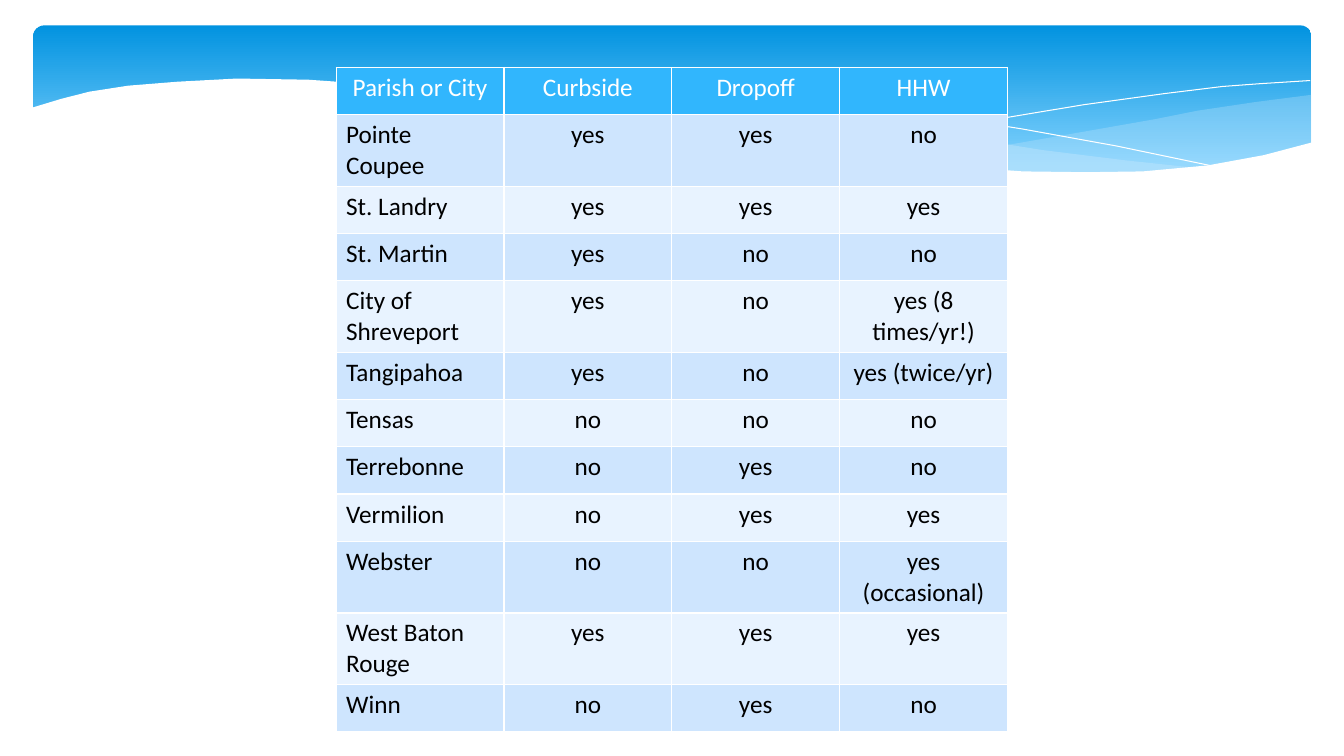
from lxml import etree
from pptx import Presentation
from pptx.dml.color import RGBColor
from pptx.enum.shapes import MSO_SHAPE
from pptx.enum.text import PP_ALIGN
from pptx.oxml.ns import qn
from pptx.util import Cm, Pt

ROUNDED = MSO_SHAPE.ROUNDED_RECTANGLE
LEFT, CENTER = PP_ALIGN.LEFT, PP_ALIGN.CENTER
WHITE, BLACK = "FFFFFF", "000000"
HEADER_BLUE, BAND_DARK, BAND_LIGHT = "31B6FD", "CEE5FE", "E8F3FF"
VEIL_BLUE = "C6E7FC"


def color(value):
    return RGBColor.from_string(value)


def add_outline(points, closed):
    start, *others = [(Cm(x), Cm(y)) for x, y in points]
    builder = slide.shapes.build_freeform(*start, scale=1.0)
    builder.add_line_segments(others, close=closed)
    shape = builder.convert_to_shape()
    shape.shadow.inherit = False
    return shape


presentation = Presentation()
presentation.slide_width = Cm(33.87)
presentation.slide_height = Cm(19.05)
slide = presentation.slides.add_slide(presentation.slide_layouts[6])

# Blue banner
banner = slide.shapes.add_shape(ROUNDED, Cm(0.84), Cm(0.64), Cm(32.21), Cm(3.96))
banner.adjustments[0] = 0.07
banner.shadow.inherit = False
banner.line.fill.background()
banner.fill.gradient()
banner.fill.gradient_angle = 270
for stop, (position, stop_color) in zip(
        banner.fill.gradient_stops, [(0, "0293E0"), (0.9, "83D3FE")]):
    stop.position = position
    stop.color.rgb = color(stop_color)

# Wave outlines, in centimetres
right_veil = [
    (33.05, 2.39), (31.65, 2.57), (30.18, 2.79), (29.13, 3.0), (27.25, 3.33),
    (25.53, 3.63), (23.9, 3.86), (22.4, 4.06), (23.88, 4.19), (25.22, 4.29),
    (26.44, 4.37), (27.91, 4.37), (29.24, 4.32), (30.38, 4.19), (31.67, 3.96),
    (33.05, 3.61)]
middle_veil = [
    (30.23, 4.24), (28.35, 4.04), (26.26, 3.78), (23.9, 3.4), (21.31, 2.95),
    (18.8, 2.54), (16.56, 2.26), (14.22, 2.08), (12.24, 2.03), (10.62, 2.08),
    (9.7, 2.18), (12.27, 2.46), (15.21, 2.95), (17.93, 3.43), (20.37, 3.81),
    (22.53, 4.09), (24.46, 4.27), (26.16, 4.37), (27.69, 4.39), (29.03, 4.34)]
falling_line = [
    (10.46, 2.29), (11.35, 2.16), (12.67, 2.08), (14.66, 2.08), (16.56, 2.13),
    (18.85, 2.31), (21.54, 2.62), (23.55, 2.9), (25.76, 3.25), (28.14, 3.68),
    (30.73, 4.22)]
rising_line = [
    (20.78, 3.84), (22.76, 3.43), (25.32, 2.97), (27.31, 2.64), (29.34, 2.36),
    (30.81, 2.18), (31.75, 2.11), (33.02, 2.03)]
white_wave = [
    (33.1, 3.58), (31.85, 3.91), (30.43, 4.17), (28.8, 4.32), (27.38, 4.34),
    (25.78, 4.32), (23.98, 4.19), (21.92, 3.96), (19.61, 3.66), (17.04, 3.25),
    (15.14, 2.9), (12.34, 2.44), (9.91, 2.16), (7.77, 2.01), (5.97, 1.98),
    (4.47, 2.06), (3.23, 2.16), (2.26, 2.31), (1.55, 2.49), (0.79, 2.72),
    (0.79, 5.69), (33.1, 5.69)]

# Translucent veils
for points, opacity in [(right_veil, 29), (middle_veil, 40)]:
    veil = add_outline(points, True)
    veil.line.fill.background()
    veil.fill.solid()
    veil.fill.fore_color.rgb = color(VEIL_BLUE)
    veil_color = veil.fill._xPr.find(".//" + qn("a:srgbClr"))
    etree.SubElement(veil_color, qn("a:alpha"), val=str(opacity * 1000))

# Thin white lines
for points in (falling_line, rising_line):
    thin_line = add_outline(points, False)
    thin_line.fill.background()
    thin_line.line.color.rgb = color(WHITE)
    thin_line.line.width = Pt(0)

# White lower edge of the banner
wave = add_outline(white_wave, True)
wave.line.fill.background()
wave.fill.solid()
wave.fill.fore_color.rgb = color(WHITE)

# Recycling services table
rows = [
    ("Parish or City", "Curbside", "Dropoff", "HHW"),
    ("Pointe Coupee", "yes", "yes", "no"),
    ("St. Landry", "yes", "yes", "yes"),
    ("St. Martin", "yes", "no", "no"),
    ("City of Shreveport", "yes", "no", "yes (8 times/yr!)"),
    ("Tangipahoa", "yes", "no", "yes (twice/yr)"),
    ("Tensas", "no", "no", "no"),
    ("Terrebonne", "no", "yes", "no"),
    ("Vermilion", "no", "yes", "yes"),
    ("Webster", "no", "no", "yes (occasional)"),
    ("West Baton Rouge", "yes", "yes", "yes"),
    ("Winn", "no", "yes", "no"),
]
column_width, row_height = Cm(4.23), Cm(1.19)
table = slide.shapes.add_table(
    len(rows), len(rows[0]), Cm(8.47), Cm(1.7),
    column_width * len(rows[0]), row_height * len(rows)).table
table.first_row = False
table.horz_banding = False
for column in table.columns:
    column.width = column_width

for row_index, row in enumerate(rows):
    table.rows[row_index].height = row_height
    is_header = row_index == 0
    band = BAND_DARK if row_index % 2 else BAND_LIGHT
    for column_index, text in enumerate(row):
        cell = table.cell(row_index, column_index)
        cell.text = text
        paragraph = cell.text_frame.paragraphs[0]
        paragraph.alignment = CENTER if is_header or column_index else LEFT
        font = paragraph.runs[0].font
        for name, value in {"name": "Calibri", "size": Pt(18), "bold": False}.items():
            setattr(font, name, value)
        font.color.rgb = color(WHITE if is_header else BLACK)

        # White cell borders, then the fill
        properties = cell._tc.get_or_add_tcPr()
        for side in ("a:lnL", "a:lnR", "a:lnT", "a:lnB"):
            border = etree.SubElement(properties, qn(side), w=str(Pt(1)))
            border_fill = etree.SubElement(border, qn("a:solidFill"))
            etree.SubElement(border_fill, qn("a:srgbClr"), val=WHITE)
        cell.fill.solid()
        cell.fill.fore_color.rgb = color(HEADER_BLUE if is_header else band)

presentation.save("out.pptx")
